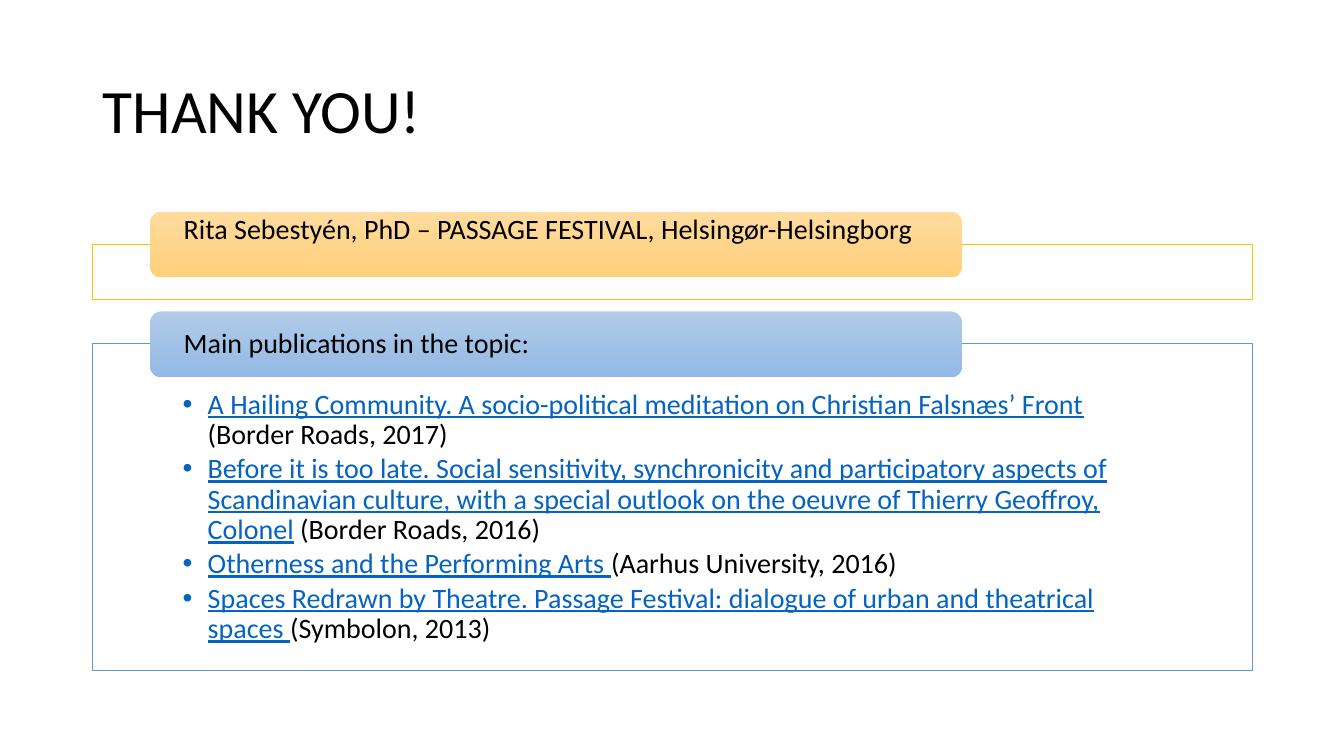
from lxml.etree import SubElement
from pptx import Presentation
from pptx.dml.color import RGBColor
from pptx.enum.shapes import MSO_SHAPE
from pptx.enum.text import MSO_ANCHOR, MSO_AUTO_SIZE, PP_ALIGN
from pptx.oxml.ns import qn
from pptx.util import Inches, Pt

BLACK = RGBColor(0x00, 0x00, 0x00)
WHITE = RGBColor(0xFF, 0xFF, 0xFF)
LINK = RGBColor(0x05, 0x63, 0xC1)
GOLD = RGBColor(0xFF, 0xC0, 0x00)
BLUE = RGBColor(0x5B, 0x9B, 0xD5)
GOLD_FADE = (RGBColor(0xFF, 0xDB, 0x9E), RGBColor(0xFF, 0xD0, 0x7C))
BLUE_FADE = (RGBColor(0xB1, 0xCB, 0xE9), RGBColor(0x93, 0xB9, 0xE4))
FONT = "Calibri"
LEFT, WIDTH = 0.92, 11.5

WORKS = [
    ("A Hailing Community. A socio-political meditation on Christian Falsnæs’ Front ",
     "(Border Roads, 2017)"),
    ("Before it is too late. Social sensitivity, synchronicity and participatory aspects of "
     "Scandinavian culture, with a special outlook on the oeuvre of Thierry Geoffroy, Colonel",
     " (Border Roads, 2016)"),
    ("Otherness and the Performing Arts ", "(Aarhus University, 2016)"),
    ("Spaces Redrawn by Theatre. Passage Festival: dialogue of urban and theatrical spaces ",
     "(Symbolon, 2013)"),
]


def place(shape, left, top, width, height):
    """Move a shape to a box given in inches."""
    shape.left, shape.top = Inches(left), Inches(top)
    shape.width, shape.height = Inches(width), Inches(height)


def inset(frame, left, top, right, low):
    """Set the inner margins of a text frame in inches."""
    frame.margin_left, frame.margin_top = Inches(left), Inches(top)
    frame.margin_right, frame.margin_bottom = Inches(right), Inches(low)


def style(font, size, color):
    """Give a font its face, size and colour."""
    font.name, font.size = FONT, Pt(size)
    font.color.rgb = color


def outline(shape, color):
    """Give a frame its white fill and thin line."""
    shape.fill.solid()
    shape.fill.fore_color.rgb = WHITE
    shape.line.color.rgb = color
    shape.line.width = Pt(0.5)


def add_title(slide, text, left, top, width, height):
    """Fill the title placeholder."""
    title = slide.shapes.title
    place(title, left, top, width, height)
    frame = title.text_frame
    frame.text = text
    frame.auto_size = MSO_AUTO_SIZE.NONE
    frame.vertical_anchor = MSO_ANCHOR.MIDDLE
    para = frame.paragraphs[0]
    para.alignment = PP_ALIGN.LEFT
    para.line_spacing = 0.9
    style(para.runs[0].font, 44, BLACK)


def add_frame(slide, color, left, top, width, height):
    """Draw an empty outlined frame."""
    box = slide.shapes.add_shape(MSO_SHAPE.RECTANGLE, Inches(left), Inches(top),
                                 Inches(width), Inches(height))
    box.shadow.inherit = False
    outline(box, color)


def add_label(slide, text, fade, anchor, left, top):
    """Draw a rounded label that overlaps the top edge of a frame."""
    label = slide.shapes.add_shape(MSO_SHAPE.ROUNDED_RECTANGLE, Inches(left + 0.57),
                                   Inches(top - 0.32), Inches(8.05), Inches(0.65))
    label.shadow.inherit = False
    label.line.fill.background()
    label.fill.gradient()
    label.fill.gradient_angle = 270
    for stop, color in zip(label.fill.gradient_stops, fade):
        stop.color.rgb = color
    frame = label.text_frame
    frame.text = text
    frame.word_wrap = True
    frame.vertical_anchor = anchor
    inset(frame, 0.3, 0, 0.3, 0)
    para = frame.paragraphs[0]
    para.alignment = PP_ALIGN.LEFT
    para.line_spacing = 0.9
    style(para.runs[0].font, 20, BLACK)


def add_bullet(para):
    """Give a paragraph a hanging round bullet in the link colour."""
    props = para._p.get_or_add_pPr()
    props.set("marL", str(Inches(0.25)))
    props.set("indent", str(-Inches(0.25)))
    tint = SubElement(props, qn("a:buClr"))
    SubElement(tint, qn("a:srgbClr")).set("val", str(LINK))
    SubElement(props, qn("a:buFont")).set("typeface", "Arial")
    SubElement(props, qn("a:buChar")).set("char", "•")


def add_works(slide, works, left, top, width, height):
    """Fill the outlined body placeholder with the list of works."""
    body = slide.placeholders[1]
    place(body, left, top, width, height)
    outline(body, BLUE)
    frame = body.text_frame
    frame.auto_size = MSO_AUTO_SIZE.NONE
    frame.vertical_anchor = MSO_ANCHOR.TOP
    inset(frame, 0.89, 0.46, 0.89, 0.16)
    for index, (name, source) in enumerate(works):
        para = frame.add_paragraph() if index else frame.paragraphs[0]
        add_bullet(para)
        para.line_spacing = 0.9
        para.space_before, para.space_after = Pt(0), Pt(3)
        for text, color in ((name, LINK), (source, BLACK)):
            run = para.add_run()
            run.text = text
            style(run.font, 20, color)
            run.font.underline = color == LINK


def main():
    """Build and save the closing slide."""
    deck = Presentation()
    deck.slide_width, deck.slide_height = Inches(13.33), Inches(7.5)
    slide = deck.slides.add_slide(deck.slide_layouts[1])
    add_title(slide, "THANK YOU!", LEFT, 0.4, WIDTH, 1.45)
    add_frame(slide, GOLD, LEFT, 2.42, WIDTH, 0.55)
    add_label(slide, "Rita Sebestyén, PhD – PASSAGE FESTIVAL, Helsingør-Helsingborg",
              GOLD_FADE, MSO_ANCHOR.TOP, LEFT, 2.42)
    add_works(slide, WORKS, LEFT, 3.41, WIDTH, 3.24)
    add_label(slide, "Main publications in the topic:", BLUE_FADE,
              MSO_ANCHOR.MIDDLE, LEFT, 3.41)
    deck.save("out.pptx")


if __name__ == "__main__":
    main()
